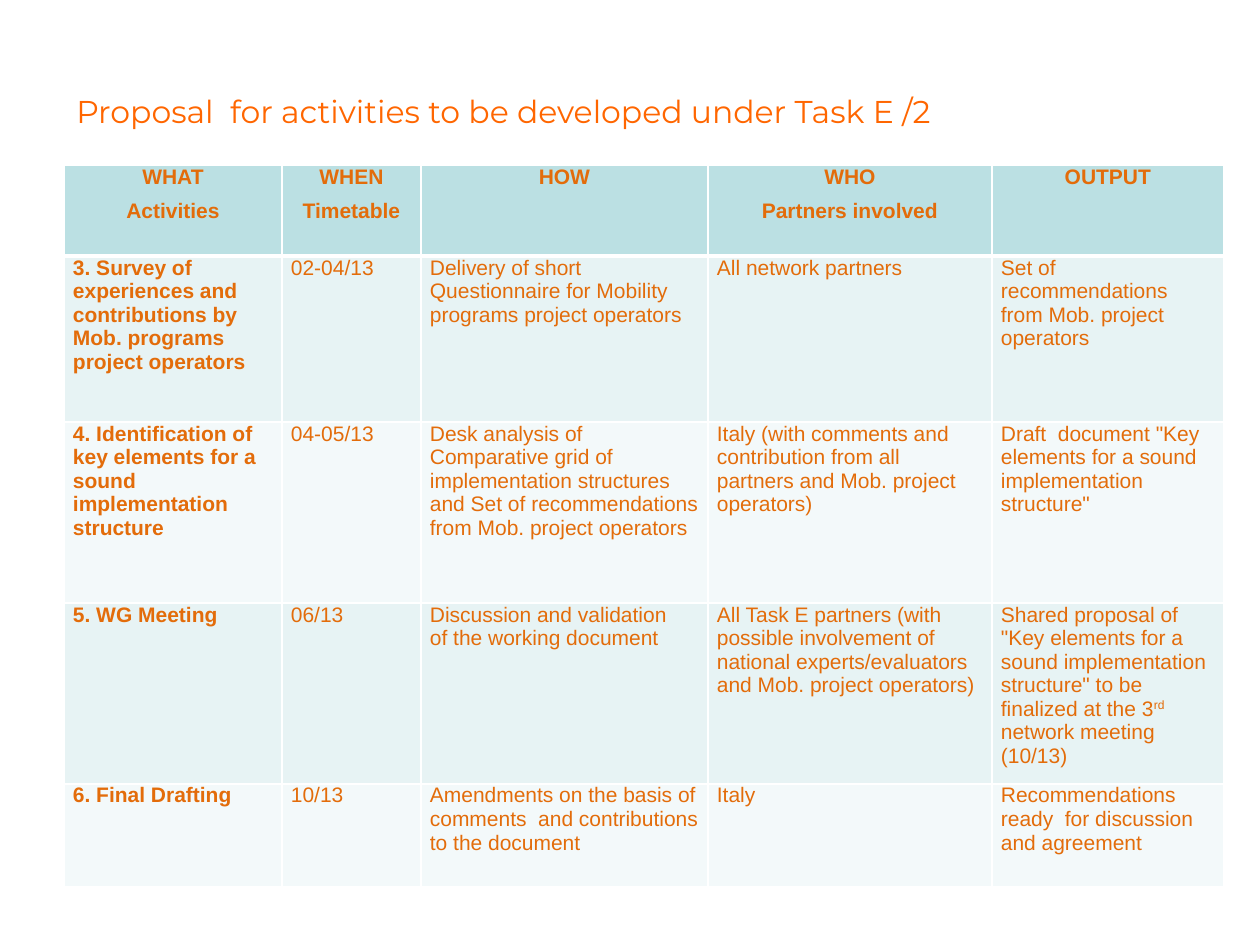
from dataclasses import dataclass

from lxml import etree
from pptx import Presentation
from pptx.dml.color import RGBColor
from pptx.enum.text import MSO_ANCHOR, PP_ALIGN
from pptx.oxml.ns import qn
from pptx.util import Pt

CENTER, LEFT = PP_ALIGN.CENTER, PP_ALIGN.LEFT
TOP = MSO_ANCHOR.TOP
EMU_PER_PX = 914400 / 126
BLANK_LAYOUT = 6


@dataclass(frozen=True)
class Theme:
    title_color: str = "FF6600"
    table_color: str = "E36C0A"
    header_fill: str = "BBE0E3"
    band_fills: tuple = ("E7F3F4", "F3F9FA")
    border_color: str = "FFFFFF"
    border_width: int = 1
    header_rule_width: int = 3
    title_font: str = "Montserrat"
    table_font: str = "Arial"
    title_size: int = 18
    table_size: int = 12
    paragraph_gap: int = 6


THEME = Theme()

TITLE = "Proposal  for activities to be developed under Task E /2"
TITLE_BOX = (64, 86, 1022, 89)
TABLE_BOX = (64, 165, 1160, 722)
COLUMN_WIDTHS = (218, 139, 287, 284, 232)
ROW_HEIGHTS = (91, 166, 181, 181, 103)

# In cell text, \n starts a paragraph, \v breaks a line and ^ encloses a superscript.
ROWS = (
    ("WHAT\nActivities", "WHEN\nTimetable", "HOW", "WHO\nPartners involved", "OUTPUT"),
    (
        "3. Survey of experiences and contributions by Mob. programs project operators",
        "02-04/13",
        "Delivery of short Questionnaire for Mobility programs project operators",
        "All network partners",
        "Set of recommendations from Mob. project operators",
    ),
    (
        "4. Identification of key elements for a sound implementation structure",
        "04-05/13",
        "Desk analysis of Comparative grid of implementation structures "
        "and Set of recommendations from Mob. project operators",
        "Italy (with comments and contribution from all partners and Mob. project operators)",
        'Draft  document "Key elements for a sound implementation structure"',
    ),
    (
        "5. WG Meeting",
        "06/13",
        "Discussion and validation\vof the working document",
        "All Task E partners (with possible involvement of "
        "national experts/evaluators and Mob. project operators)",
        'Shared proposal of "Key elements for a sound implementation structure" '
        "to be finalized at the 3^rd^ network meeting (10/13)",
    ),
    (
        "6. Final Drafting",
        "10/13",
        "Amendments on the basis of comments  and contributions to the document",
        "Italy",
        "Recommendations ready  for discussion and agreement",
    ),
)


def px(length):
    return round(length * EMU_PER_PX)


def set_attributes(target, values):
    for name, value in values.items():
        setattr(target, name, value)


def format_font(font, color, **values):
    set_attributes(font, values)
    font.color.rgb = RGBColor.from_string(color)


def add_title(slide, box):
    frame = slide.shapes.add_textbox(*map(px, box)).text_frame
    frame.word_wrap = True
    paragraph = frame.paragraphs[0]
    paragraph.text = TITLE
    format_font(
        paragraph.runs[0].font,
        THEME.title_color,
        name=THEME.title_font,
        size=Pt(THEME.title_size),
    )


def fill_paragraph(paragraph, text, bold):
    """Write text, raising every second part between ^ marks."""
    for index, part in enumerate(text.split("^")):
        for line_index, line in enumerate(part.split("\v")):
            if line_index:
                paragraph.add_line_break()
            run = paragraph.add_run()
            run.text = line
            format_font(
                run.font,
                THEME.table_color,
                name=THEME.table_font,
                size=Pt(THEME.table_size),
                bold=bold,
            )
            if index % 2:
                run._r.get_or_add_rPr().set("baseline", "30000")


def set_borders(cell, top, bottom):
    """Draw the four cell edges; top and bottom are widths in points."""
    properties = cell._tc.get_or_add_tcPr()
    widths = {"L": THEME.border_width, "R": THEME.border_width, "T": top, "B": bottom}
    for side, width in widths.items():
        line = etree.SubElement(properties, qn(f"a:ln{side}"), w=str(Pt(width)))
        fill = etree.SubElement(line, qn("a:solidFill"))
        etree.SubElement(fill, qn("a:srgbClr"), val=THEME.border_color)


def fill_cell(cell, text, row, column):
    is_header = row == 0
    set_attributes(cell, {
        "margin_left": px(9),
        "margin_right": px(9),
        "margin_top": 0,
        "margin_bottom": 0,
        "vertical_anchor": TOP,
    })
    set_borders(
        cell,
        top=THEME.header_rule_width if row == 1 else THEME.border_width,
        bottom=THEME.header_rule_width if is_header else THEME.border_width,
    )
    color = THEME.header_fill if is_header else THEME.band_fills[(row - 1) % 2]
    cell.fill.solid()
    cell.fill.fore_color.rgb = RGBColor.from_string(color)

    frame = cell.text_frame
    for index, line in enumerate(text.split("\n")):
        paragraph = frame.add_paragraph() if index else frame.paragraphs[0]
        paragraph.alignment = CENTER if is_header else LEFT
        if index:
            paragraph.space_before = Pt(THEME.paragraph_gap)
        fill_paragraph(paragraph, line, bold=is_header or column == 0)


def add_activity_table(slide, box):
    table = slide.shapes.add_table(len(ROWS), len(COLUMN_WIDTHS), *map(px, box)).table
    for column, width in zip(table.columns, COLUMN_WIDTHS):
        column.width = px(width)
    for row, height in zip(table.rows, ROW_HEIGHTS):
        row.height = px(height)
    for row, texts in enumerate(ROWS):
        for column, text in enumerate(texts):
            fill_cell(table.cell(row, column), text, row, column)


def main():
    presentation = Presentation()
    presentation.slide_width, presentation.slide_height = px(1260), px(945)
    slide = presentation.slides.add_slide(presentation.slide_layouts[BLANK_LAYOUT])
    add_activity_table(slide, TABLE_BOX)
    add_title(slide, TITLE_BOX)
    presentation.save("out.pptx")


if __name__ == "__main__":
    main()
